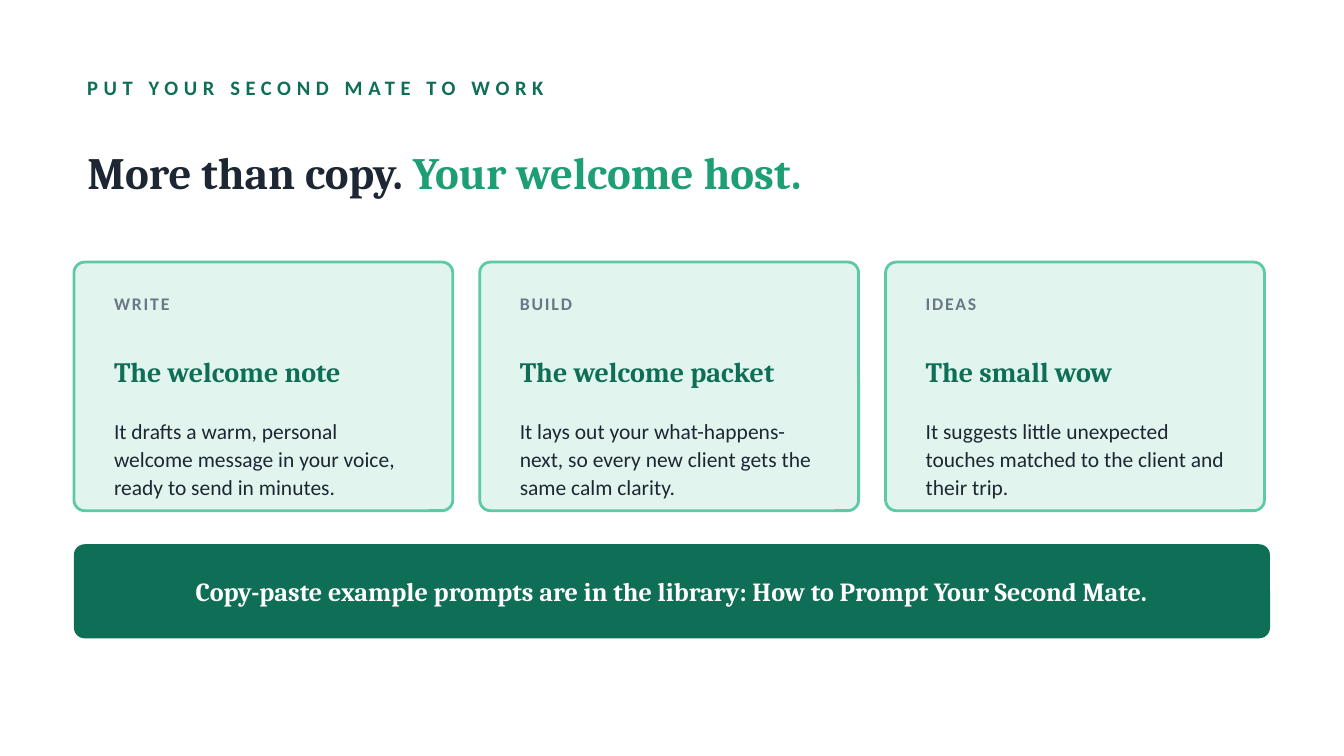
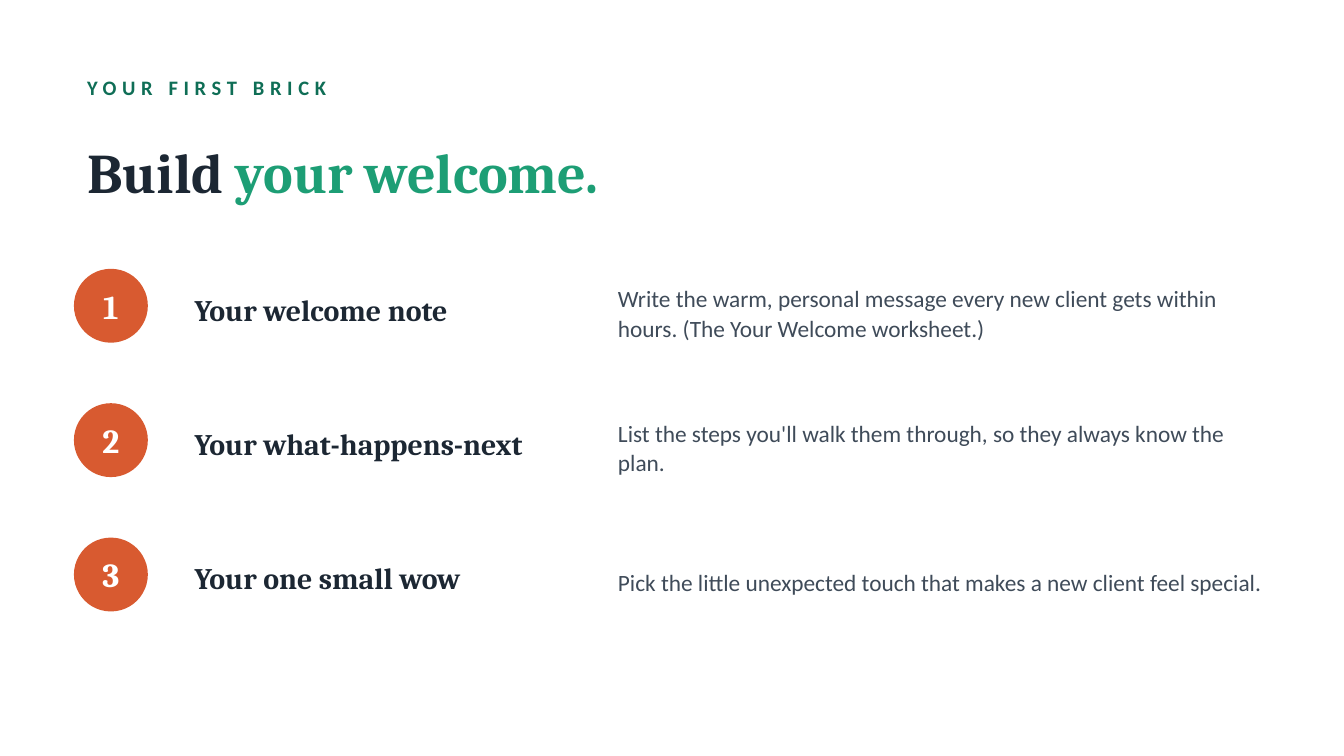
from pptx import Presentation
from pptx.dml.color import RGBColor
from pptx.enum.shapes import MSO_SHAPE
from pptx.enum.text import MSO_ANCHOR, MSO_AUTO_SIZE, PP_ALIGN
from pptx.util import Pt

# Content
WELCOME_HOST = {
    "kicker": "PUT YOUR SECOND MATE TO WORK",
    "title": ("More than copy. ", "Your welcome host."),
    "title_size": 24,
    "cards": [
        ("WRITE", "The welcome note",
         "It drafts a warm, personal welcome message in your voice, ready to send in minutes."),
        ("BUILD", "The welcome packet",
         "It lays out your what-happens-next, so every new client gets the same calm clarity."),
        ("IDEAS", "The small wow",
         "It suggests little unexpected touches matched to the client and their trip."),
    ],
    "banner": "Copy-paste example prompts are in the library: How to Prompt Your Second Mate.",
}
FIRST_BRICK = {
    "kicker": "YOUR FIRST BRICK",
    "title": ("Build ", "your welcome."),
    "title_size": 30,
    "steps": [
        ("Your welcome note",
         "Write the warm, personal message every new client gets within hours. "
         "(The Your Welcome worksheet.)"),
        ("Your what-happens-next",
         "List the steps you'll walk them through, so they always know the plan."),
        ("Your one small wow",
         "Pick the little unexpected touch that makes a new client feel special."),
    ],
}

# Shared look
COLORS = {
    "ink": "1C2733", "slate": "3F4B59", "gray": "6B7785", "white": "FFFFFF",
    "forest": "0F6E56", "green": "1D9E75", "mint": "5DCAA5", "pale": "E1F5EE",
    "orange": "D85A30",
}
SERIF, SANS = "Cambria", "Calibri"
MARGIN, CONTENT_WIDTH = 39.6, 640.8
CARD_TOP, CARD_WIDTH, CARD_HEIGHT, CARD_GAP, CARD_PAD = 140.4, 203, 133.2, 14.4, 14.4
STEP_TOP, STEP_PITCH, CIRCLE = 144, 72, 39.6
CORNER = 7.2


def color(name):
    return RGBColor.from_string(COLORS[name])


def style_span(span, size, hue, font=SERIF, bold=True, tracking=0):
    span.font.name, span.font.size, span.font.bold = font, Pt(size), bold
    span.font.color.rgb = color(hue)
    if tracking:
        span._r.get_or_add_rPr().set("spc", str(tracking * 100))


def write(box, text, size, hue, align=PP_ALIGN.LEFT, spacing=None, **style):
    frame = box.text_frame
    frame.word_wrap = True
    frame.vertical_anchor = MSO_ANCHOR.MIDDLE
    frame.text = text
    para = frame.paragraphs[0]
    para.alignment = align
    if spacing:
        para.line_spacing = spacing
    style_span(para.runs[0], size, hue, **style)


def add_text(page, left, top, width, height, *content, **style):
    box = page.shapes.add_textbox(Pt(left), Pt(top), Pt(width), Pt(height))
    write(box, *content, **style)


def add_panel(page, kind, left, top, width, height, fill, line=None):
    panel = page.shapes.add_shape(kind, Pt(left), Pt(top), Pt(width), Pt(height))
    panel.shadow.inherit = False
    panel.fill.solid()
    panel.fill.fore_color.rgb = color(fill)
    if line:
        panel.line.color.rgb = color(line)
        panel.line.width = Pt(1.5)
    else:
        panel.line.fill.background()
    if kind == MSO_SHAPE.ROUNDED_RECTANGLE:
        panel.adjustments[0] = CORNER / min(width, height) * 0.8
    return panel


def add_page(deck, content):
    page = deck.slides.add_slide(deck.slide_layouts[5])
    page.background.fill.solid()
    page.background.fill.fore_color.rgb = color("white")
    add_text(page, MARGIN, 36, CONTENT_WIDTH, 21.6, content["kicker"], 11, "forest",
             font=SANS, tracking=3)

    # Two-tone title
    title = page.shapes.title
    title.left, title.top = Pt(MARGIN), Pt(61.2)
    title.width, title.height = Pt(CONTENT_WIDTH), Pt(61.2)
    lead, accent = content["title"]
    write(title, lead, content["title_size"], "ink")
    title.text_frame.auto_size = MSO_AUTO_SIZE.NONE
    span = title.text_frame.paragraphs[0].add_run()
    span.text = accent
    style_span(span, content["title_size"], "green")
    return page


def build_welcome_host(deck):
    page = add_page(deck, WELCOME_HOST)

    # Cards
    for index, (label, heading, body) in enumerate(WELCOME_HOST["cards"]):
        left = MARGIN + index * (CARD_WIDTH + CARD_GAP)
        add_panel(page, MSO_SHAPE.ROUNDED_RECTANGLE, left, CARD_TOP, CARD_WIDTH, CARD_HEIGHT,
                  "pale", "mint")
        inner, width = left + CARD_PAD, 176.4
        add_text(page, inner, CARD_TOP + 11.5, width, 21.6, label, 9.5, "gray",
                 font=SANS, tracking=1)
        add_text(page, inner, CARD_TOP + 33.1, width, 50.4, heading, 15, "forest")
        add_text(page, inner, CARD_TOP + 85, width, 39.6, body, 11.5, "ink",
                 font=SANS, bold=False, spacing=1.08)

    # Banner
    banner = add_panel(page, MSO_SHAPE.ROUNDED_RECTANGLE, MARGIN, 291.6, CONTENT_WIDTH, 50.4,
                       "forest")
    write(banner, WELCOME_HOST["banner"], 14, "white", align=PP_ALIGN.CENTER)


def build_first_brick(deck):
    page = add_page(deck, FIRST_BRICK)

    # Numbered steps
    for index, (heading, body) in enumerate(FIRST_BRICK["steps"]):
        top = STEP_TOP + index * STEP_PITCH
        circle = add_panel(page, MSO_SHAPE.OVAL, MARGIN, top, CIRCLE, CIRCLE, "orange")
        frame = circle.text_frame
        frame.margin_left = frame.margin_right = frame.margin_top = frame.margin_bottom = 0
        write(circle, str(index + 1), 18, "white", align=PP_ALIGN.CENTER)
        add_text(page, 97.2, top - 3.6, 216, 50.4, heading, 16, "ink")
        add_text(page, 324, top - 3.6, 360, 54, body, 12.5, "slate",
                 font=SANS, bold=False, spacing=1.05)


def main():
    deck = Presentation()
    deck.slide_width, deck.slide_height = Pt(720), Pt(405)
    build_welcome_host(deck)
    build_first_brick(deck)
    deck.save("out.pptx")


if __name__ == "__main__":
    main()
